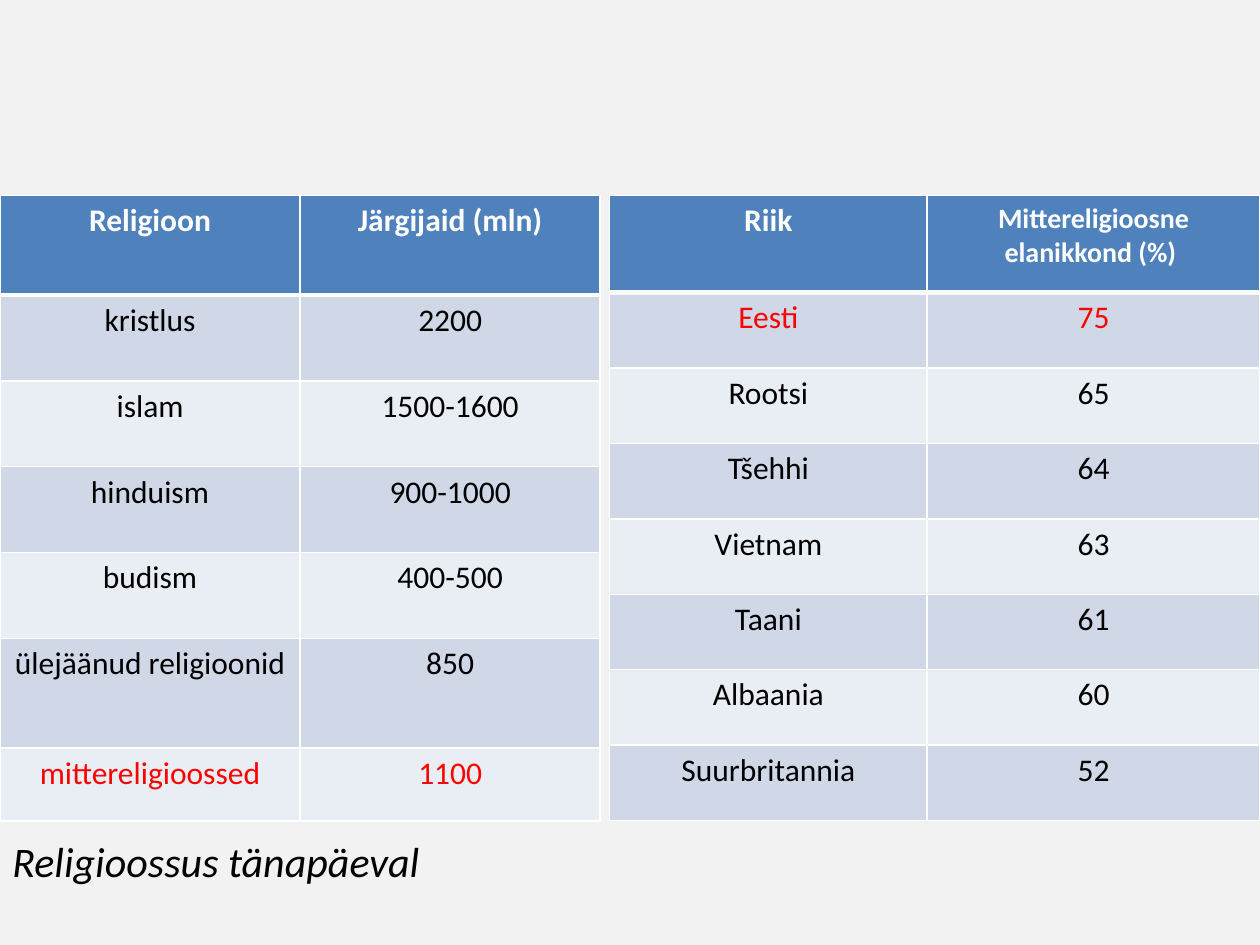
"""Build the slide on religiosity today: two tables and a caption."""
from dataclasses import dataclass

from lxml import etree
from pptx import Presentation
from pptx.dml.color import RGBColor
from pptx.enum.text import MSO_AUTO_SIZE, PP_ALIGN
from pptx.oxml.ns import qn
from pptx.util import Cm, Pt

CENTER = PP_ALIGN.CENTER
FIT_SHAPE = MSO_AUTO_SIZE.SHAPE_TO_FIT_TEXT


@dataclass(frozen=True)
class Theme:
    font: str = "Calibri"
    background: str = "F2F2F2"
    header: str = "4F81BD"
    bands: tuple = ("D0D8E8", "E9EDF4")
    border: str = "FFFFFF"
    header_text: str = "FFFFFF"
    text: str = "000000"
    accent: str = "FF0000"
    body_size: int = 18
    small_size: int = 16
    caption_size: int = 24
    thin: int = 1
    thick: int = 3


THEME = Theme()
TABLE_TOP = 3.94
CAPTION = "Religioossus tänapäeval"
TABLES = [
    {
        "left": 0,
        "cols": [6.05, 6.05],
        "heights": [2.01] + [1.73] * 4 + [2.21, 1.47],
        "header_sizes": [THEME.body_size, THEME.body_size],
        "highlight": "mittereligioossed",
        "rows": [
            ("Religioon", "Järgijaid (mln)"),
            ("kristlus", "2200"),
            ("islam", "1500-1600"),
            ("hinduism", "900-1000"),
            ("budism", "400-500"),
            ("ülejäänud religioonid", "850"),
            ("mittereligioossed", "1100"),
        ],
    },
    {
        "left": 12.29,
        "cols": [6.4, 6.71],
        "heights": [1.96] + [1.52] * 7,
        "header_sizes": [THEME.body_size, THEME.small_size],
        "highlight": "Eesti",
        "rows": [
            ("Riik", "Mittereligioosne elanikkond (%) "),
            ("Eesti", "75"),
            ("Rootsi", "65"),
            ("Tšehhi", "64"),
            ("Vietnam", "63"),
            ("Taani", "61"),
            ("Albaania", "60"),
            ("Suurbritannia", "52"),
        ],
    },
]


def rgb(value):
    return RGBColor.from_string(value)


def set_font(p, size, color, bold=False, italic=False):
    p.font.name = THEME.font
    p.font.size = Pt(size)
    p.font.bold = bold
    p.font.italic = italic
    p.font.color.rgb = rgb(color)


def set_borders(cell, row):
    widths = {
        "lnL": THEME.thin,
        "lnR": THEME.thin,
        "lnT": THEME.thick if row == 1 else THEME.thin,
        "lnB": THEME.thick if row == 0 else THEME.thin,
    }
    tc_pr = cell._tc.get_or_add_tcPr()
    for side, width in widths.items():
        ln = etree.SubElement(tc_pr, qn(f"a:{side}"), w=str(Pt(width)))
        fill = etree.SubElement(ln, qn("a:solidFill"))
        etree.SubElement(fill, qn("a:srgbClr"), val=THEME.border)


def add_grid(slide, left, cols, heights, header_sizes, highlight, rows):
    table = slide.shapes.add_table(
        len(rows), len(cols), Cm(left), Cm(TABLE_TOP), Cm(sum(cols)), Cm(sum(heights))
    ).table
    for column, width in zip(table.columns, cols):
        column.width = Cm(width)
    for i, (values, height) in enumerate(zip(rows, heights)):
        table.rows[i].height = Cm(height)
        band = THEME.bands[(i - 1) % 2] if i else THEME.header
        body_color = THEME.accent if values[0] == highlight else THEME.text
        for j, value in enumerate(values):
            cell = table.cell(i, j)
            set_borders(cell, i)
            cell.fill.solid()
            cell.fill.fore_color.rgb = rgb(band)
            p = cell.text_frame.paragraphs[0]
            p.text = value
            p.alignment = CENTER
            size = THEME.body_size if i else header_sizes[j]
            set_font(p, size, body_color if i else THEME.header_text, bold=i == 0)


def add_caption(slide):
    tf = slide.shapes.add_textbox(Cm(0), Cm(16.71), Cm(8.81), Cm(1.27)).text_frame
    tf.word_wrap = False
    tf.auto_size = FIT_SHAPE
    p = tf.paragraphs[0]
    p.text = CAPTION
    set_font(p, THEME.caption_size, THEME.text, italic=True)


def main():
    prs = Presentation()
    prs.slide_width, prs.slide_height = Cm(25.4), Cm(19.05)
    slide = prs.slides.add_slide(prs.slide_layouts[6])
    slide.background.fill.solid()
    slide.background.fill.fore_color.rgb = rgb(THEME.background)
    for grid in TABLES:
        add_grid(slide, **grid)
    add_caption(slide)
    prs.save("out.pptx")


if __name__ == "__main__":
    main()
